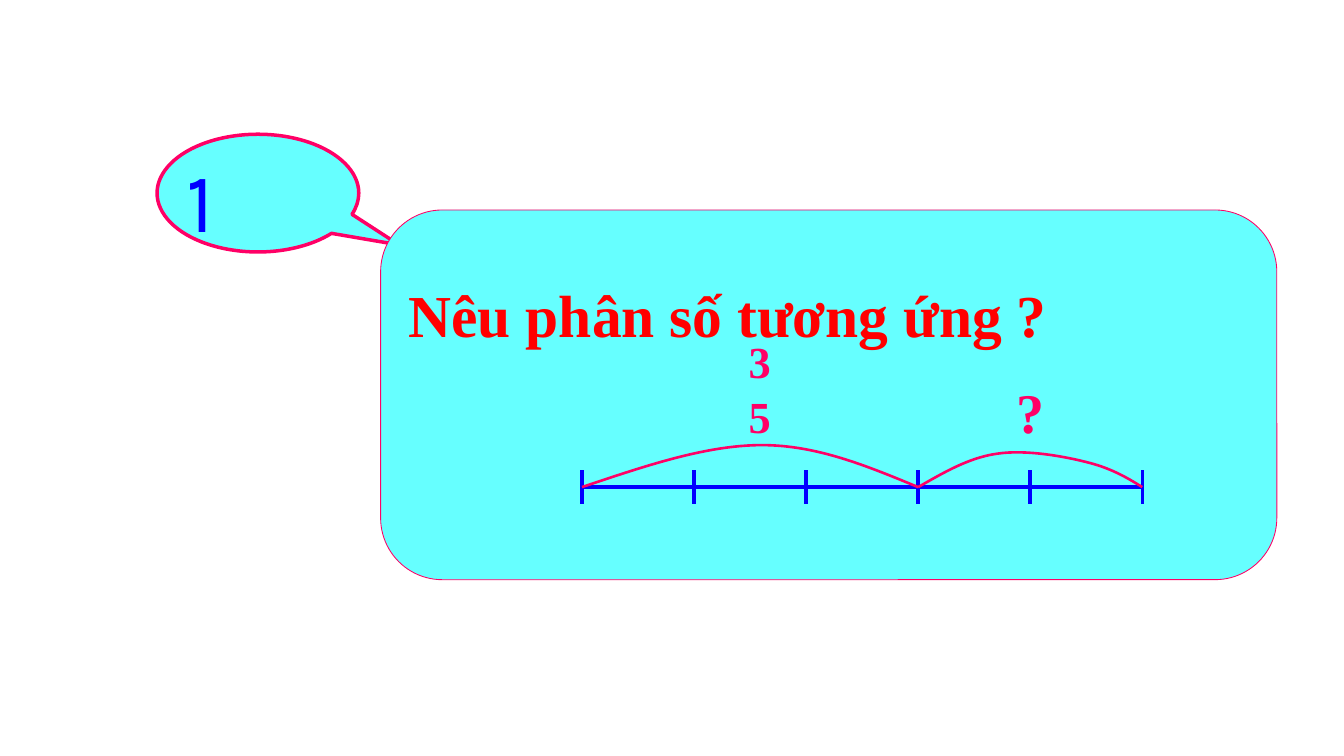
from lxml.etree import SubElement
from pptx import Presentation
from pptx.dml.color import RGBColor
from pptx.enum.shapes import MSO_CONNECTOR, MSO_SHAPE
from pptx.enum.text import MSO_ANCHOR, PP_ALIGN
from pptx.oxml.ns import qn
from pptx.util import Cm, Pt

CYAN = RGBColor(0x66, 0xFF, 0xFF)
PINK = RGBColor(0xFF, 0x00, 0x66)
BLUE = RGBColor(0x00, 0x00, 0xFF)
RED = RGBColor(0xFF, 0x00, 0x00)
SERIF = "Times New Roman"

AXIS_LEFT, AXIS_RIGHT, AXIS_Y = 17.6, 34.54, 14.73
PARTS = 5
PART = (AXIS_RIGHT - AXIS_LEFT) / PARTS
SPLIT = AXIS_LEFT + 3 * PART
TICK = 0.51


def write(sp, text, size, color, font=SERIF, bold=True,
          align=PP_ALIGN.CENTER, anchor=MSO_ANCHOR.MIDDLE,
          insets=(0.3, 0.15, 0.3, 0.15), space=0):
    tf = sp.text_frame
    tf.word_wrap = True
    tf.vertical_anchor = anchor
    tf.margin_left, tf.margin_top, tf.margin_right, tf.margin_bottom = map(Cm, insets)
    for i, line in enumerate(text.split("\n")):
        p = tf.add_paragraph() if i else tf.paragraphs[0]
        p.alignment = align
        p.space_before = Pt(space if i else 0)
        r = p.add_run()
        r.text = line
        r.font.name, r.font.size, r.font.bold = font, Pt(size), bold
        r.font.color.rgb = color


class Board:
    """Draws the lesson's elements on one slide, with lengths in centimetres."""

    def __init__(self, slide, fill, accent, ruler):
        self.shapes = slide.shapes
        self.fill, self.accent, self.ruler = fill, accent, ruler

    def box(self, kind, x, y, w, h, line, width=0.75, adjust=()):
        sp = self.shapes.add_shape(kind, Cm(x), Cm(y), Cm(w), Cm(h))
        for i, value in enumerate(adjust):
            sp.adjustments[i] = value
        sp.shadow.inherit = False
        sp.fill.solid()
        sp.fill.fore_color.rgb = self.fill
        sp.line.color.rgb = line
        sp.line.width = Pt(width)
        return sp

    def line(self, x1, y1, x2, y2):
        cn = self.shapes.add_connector(MSO_CONNECTOR.STRAIGHT, Cm(x1), Cm(y1), Cm(x2), Cm(y2))
        cn.line.color.rgb = self.ruler
        cn.line.width = Pt(3)
        SubElement(cn._element.spPr, qn("a:effectLst"))

    def curve(self, start, *points):
        fb = self.shapes.build_freeform(*map(Cm, start))
        fb.add_line_segments([(Cm(x), Cm(y)) for x, y in points], close=False)
        sp = fb.convert_to_shape()
        outline = next(sp._element.iter(qn("a:path")))
        segments = outline.findall(qn("a:lnTo"))
        for i in range(0, len(segments), 3):
            bezier = SubElement(outline, qn("a:cubicBezTo"))
            for segment in segments[i:i + 3]:
                bezier.append(segment[0])
                outline.remove(segment)
        sp.shadow.inherit = False
        sp.fill.background()
        sp.line.color.rgb = self.accent
        sp.line.width = Pt(2.25)


def main():
    prs = Presentation()
    prs.slide_width, prs.slide_height = Cm(40.64), Cm(22.86)
    s = Board(prs.slides.add_slide(prs.slide_layouts[6]), CYAN, PINK, BLUE)

    callout = s.box(MSO_SHAPE.OVAL_CALLOUT, 4.75, 4.06, 6.1, 3.56, PINK, 3, (0.7, 0.44))
    write(callout, "1", 72, BLUE, font="Karla", bold=False,
          align=PP_ALIGN.LEFT, insets=(0, 0.35, 0, 0))

    panel = s.box(MSO_SHAPE.ROUNDED_RECTANGLE, 11.51, 6.35, 27.1, 11.18, PINK, adjust=(0.167,))
    write(panel, "Nêu phân số tương ứng ?", 51, RED, align=PP_ALIGN.LEFT,
          anchor=MSO_ANCHOR.TOP, insets=(0.3, 1.51, 0.3, 0.15))

    s.line(AXIS_LEFT, AXIS_Y, AXIS_RIGHT, AXIS_Y)
    for i in range(PARTS + 1):
        x = AXIS_LEFT + i * PART
        s.line(x, AXIS_Y - TICK, x, AXIS_Y + TICK)

    s.curve((AXIS_LEFT, AXIS_Y), (19.48, 14.1), (21.34, 13.46), (23.04, 13.46),
            (24.71, 13.46), (26.24, 14.1), (SPLIT, AXIS_Y))
    s.curve((SPLIT, AXIS_Y), (28.52, 14.3), (29.29, 13.84), (30.15, 13.72),
            (30.99, 13.59), (32.13, 13.79), (32.84, 13.97),
            (33.58, 14.15), (34.06, 14.43), (AXIS_RIGHT, AXIS_Y))

    unknown = s.box(MSO_SHAPE.RECTANGLE, 30.15, 11.68, 2.03, 1.52, CYAN)
    write(unknown, "?", 48, PINK)
    fraction = s.box(MSO_SHAPE.RECTANGLE, 21.79, 10.36, 2.36, 2.54, CYAN)
    write(fraction, "3\n5", 38, PINK, insets=(0.25, 0.25, 0.25, 0), space=1.5)

    prs.save("out.pptx")


if __name__ == "__main__":
    main()
